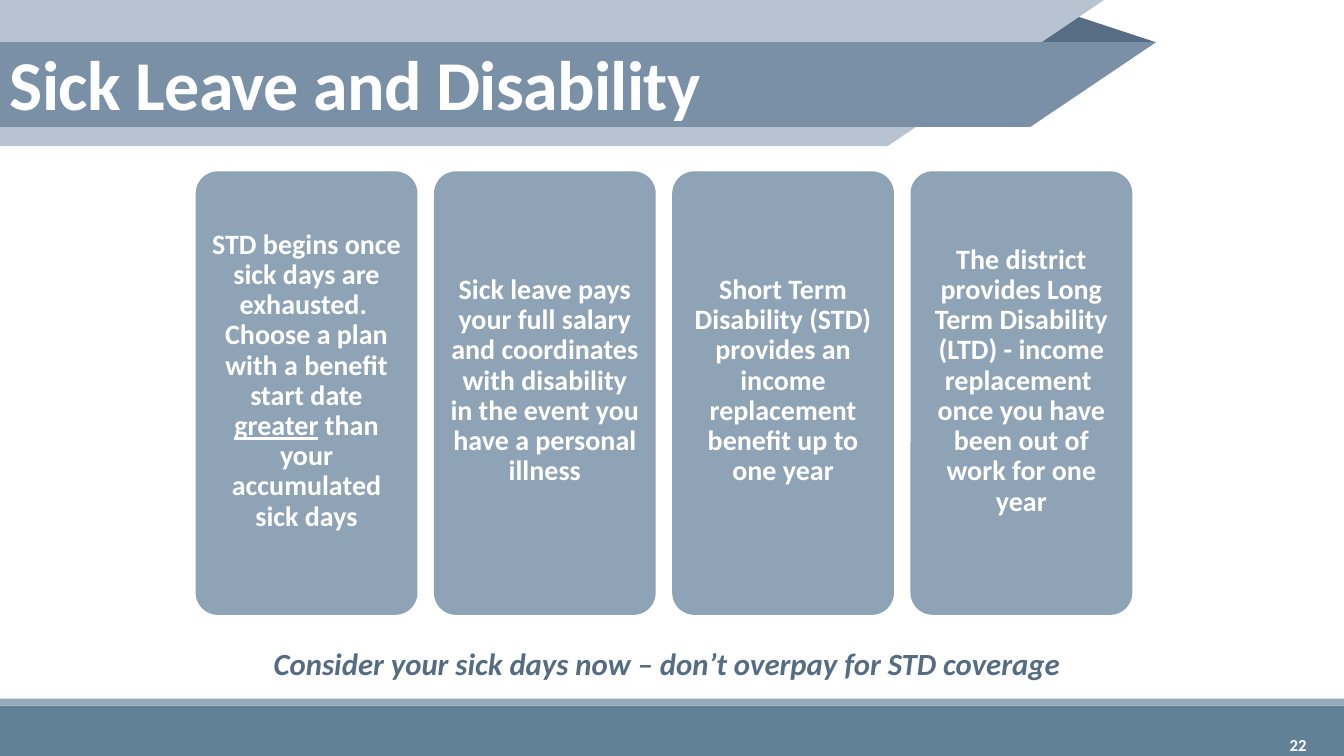
from pptx import Presentation
from pptx import util as u
from pptx.dml import color
from pptx.enum import shapes, text

Pt = u.Pt
SLIDE_WIDTH, SLIDE_HEIGHT = 960, 540


def paint(shape, fill):
    shape.shadow.inherit = False
    shape.fill.solid()
    shape.fill.fore_color.rgb = color.RGBColor.from_string(fill)
    shape.line.fill.background()
    return shape


def write(shape, runs, size, fill="FFFFFF", align="LEFT", anchor="TOP", italic=False,
          spacing=1.0, insets=(7.2, 3.6, 7.2, 3.6), underlined=None, tracking=None):
    """Fill a shape with one bold paragraph; insets run left, top, right, bottom."""
    frame = shape.text_frame
    frame.word_wrap = True
    frame.margin_left, frame.margin_top, frame.margin_right, frame.margin_bottom = map(Pt, insets)
    frame.vertical_anchor = getattr(text.MSO_ANCHOR, anchor)
    paragraph = frame.paragraphs[0]
    paragraph.alignment = getattr(text.PP_ALIGN, align)
    paragraph.line_spacing = spacing
    for words in runs:
        run = paragraph.add_run()
        run.text = words
        font = run.font
        font.name, font.size, font.bold, font.italic = "Calibri", Pt(size), True, italic
        font.color.rgb = color.RGBColor.from_string(fill)
        if words == underlined:
            font.underline = True
        if tracking is not None:
            run._r.get_or_add_rPr().set("spc", str(round(tracking * 100)))


presentation = Presentation()
presentation.slide_width, presentation.slide_height = Pt(SLIDE_WIDTH), Pt(SLIDE_HEIGHT)
slide = presentation.slides.add_slide(presentation.slide_layouts[6])
canvas = slide.shapes

# Footer bands
for top, height, fill in [(504, 36, "618197"), (499, 5, "92A9B9")]:
    paint(canvas.add_shape(shapes.MSO_SHAPE.RECTANGLE, 0, Pt(top), Pt(SLIDE_WIDTH), Pt(height)), fill)

# Header: the fold behind, then two slanted ribbons
fold = canvas.add_shape(shapes.MSO_SHAPE.ISOSCELES_TRIANGLE, Pt(735), Pt(10), Pt(90.8), Pt(20.2))
fold.adjustments[0] = 0.324
paint(fold, "566D83")
for top, bottom, top_right, bottom_right, fill in [
    (0, 104.4, 788.6, 634, "B7C3D0"),
    (30.2, 90.7, 825.8, 736, "7990A7"),
]:
    builder = canvas.build_freeform(0, Pt(top))
    builder.add_line_segments([(Pt(top_right), Pt(top)), (Pt(bottom_right), Pt(bottom)), (0, Pt(bottom))])
    paint(builder.convert_to_shape(), fill)

# Cards
cards = [
    ["STD begins once sick days are exhausted.  Choose a plan with a benefit start date ",
     "greater", " than your accumulated sick days"],
    ["Sick leave pays your full salary and coordinates with disability in the event "
     "you have a personal illness"],
    ["Short Term Disability (STD) provides an income replacement benefit up to one year"],
    ["The district provides Long Term Disability (LTD) - income replacement  once you "
     "have been out of work for one year"],
]
card_left, card_pitch = 139.8, 170.2
for index, runs in enumerate(cards):
    card = canvas.add_shape(shapes.MSO_SHAPE.ROUNDED_RECTANGLE, Pt(card_left + index * card_pitch),
                            Pt(122.4), Pt(158.4), Pt(316.8))
    card.adjustments[0] = 0.1
    paint(card, "8FA3B6")
    write(card, runs, 20, align="CENTER", anchor="MIDDLE", spacing=0.9,
          insets=(5.8, 5.8, 5.8, 23), underlined="greater")

# Closing line, title and slide number
closing = canvas.add_textbox(Pt(179.3), Pt(457.2), Pt(594), Pt(33.8))
write(closing, ["Consider your sick days now – don’t overpay for STD coverage"], 22,
      fill="566C83", align="CENTER", italic=True)
title = canvas.add_textbox(0, Pt(34.6), Pt(879), Pt(77))
write(title, ["Sick Leave and Disability"], 50, spacing=0.85, tracking=-0.5)
number = canvas.add_textbox(Pt(837.4), Pt(517.7), Pt(103), Pt(28.8))
write(number, ["22"], 12, align="RIGHT", anchor="MIDDLE")

presentation.save("out.pptx")
